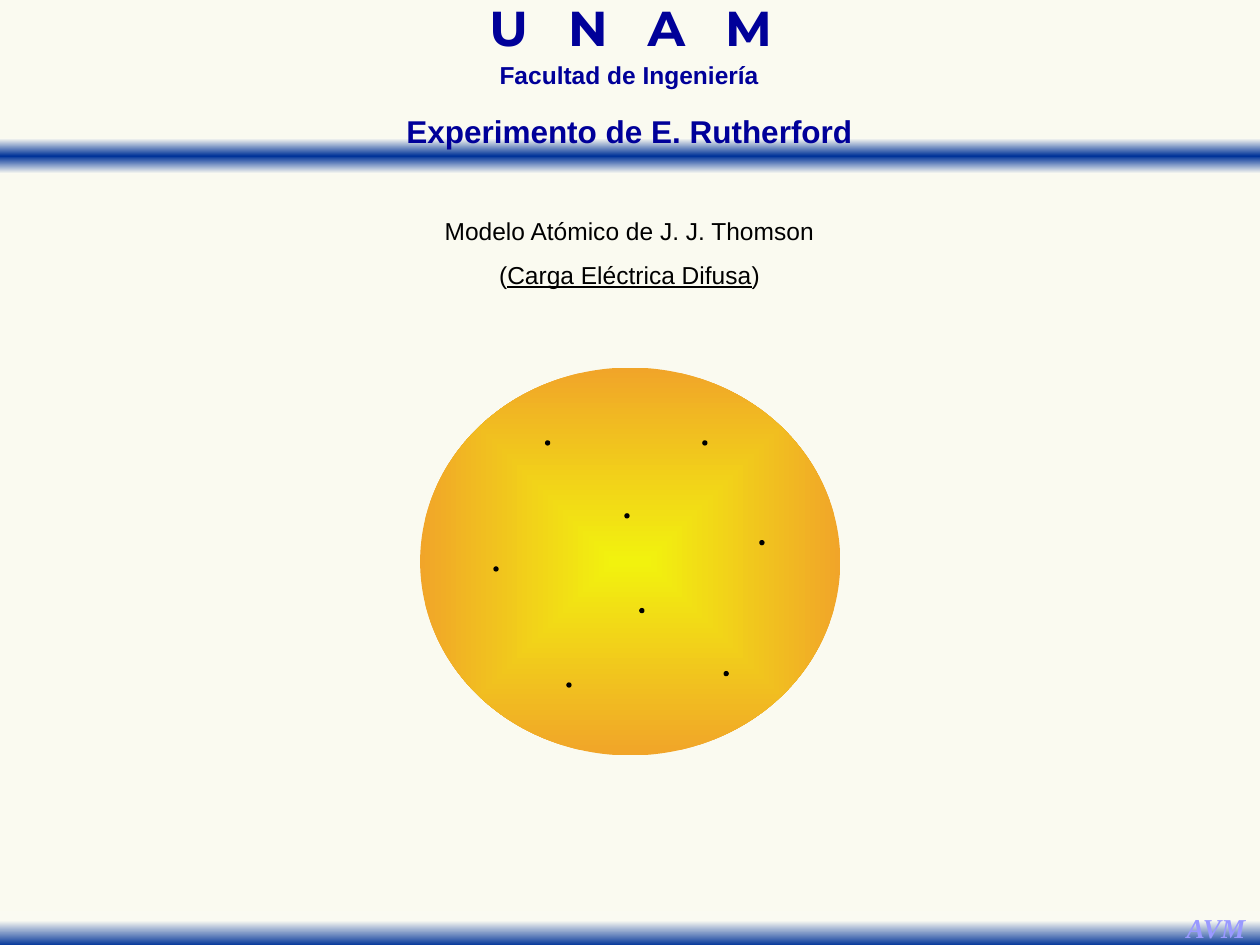
from lxml.etree import SubElement
from pptx import Presentation
from pptx.dml.color import RGBColor
from pptx.enum.shapes import MSO_SHAPE
from pptx.enum.text import MSO_AUTO_SIZE, PP_ALIGN
from pptx.oxml.ns import qn
from pptx.util import Cm, Pt

COLORS = {
    "paper": "FAFAF0",
    "band_edge": "FAFAF2",
    "band": "003399",
    "heading": "000099",
    "signature": "9999FF",
    "ink": "000000",
    "core": "F2F20E",
    "rim": "F1A529",
}
ELECTRONS = [
    (11, 8.89), (14.17, 8.89), (12.6, 10.36), (9.96, 11.43),
    (15.32, 10.9), (12.9, 12.27), (14.6, 13.54), (11.43, 13.77),
]
WIDTH, HEIGHT = 25.4, 19.05


class SlideBuilder:
    """Holds the style and the current slide, and draws each kind of element."""

    def __init__(self, deck):
        self.page = deck.slides.add_slide(deck.slide_layouts[6])
        background = self.page.background.fill
        background.solid()
        background.fore_color.rgb = self.color("paper")

    def color(self, name):
        return RGBColor.from_string(COLORS[name])

    def gradient(self, kind, place, stops, centred=False):
        shape = self.page.shapes.add_shape(kind, *map(Cm, place))
        shape.shadow.inherit = False
        shape.line.fill.background()
        shape.fill.gradient()
        fill = shape._element.spPr.find(qn("a:gradFill"))
        for child in list(fill):
            fill.remove(child)
        stop_list = SubElement(fill, qn("a:gsLst"))
        for position, name in stops:
            stop = SubElement(stop_list, qn("a:gs"), pos=str(position * 1000))
            SubElement(stop, qn("a:srgbClr"), val=COLORS[name])
        if centred:
            route = SubElement(fill, qn("a:path"), path="shape")
            sides = dict.fromkeys("ltrb", "50000")
            SubElement(route, qn("a:fillToRect"), **sides)
        else:
            SubElement(fill, qn("a:lin"), ang="5400000", scaled="1")

    def dots(self, places, size=0.08):
        group = self.page.shapes.add_group_shape()
        for left, top in places:
            dot = group.shapes.add_shape(
                MSO_SHAPE.OVAL, Cm(left), Cm(top), Cm(size), Cm(size))
            dot.shadow.inherit = False
            dot.fill.solid()
            dot.fill.fore_color.rgb = self.color("ink")
            dot.line.color.rgb = self.color("ink")
            dot.line.width = Pt(0.75)

    def text(self, place, lines, size, color, font="Arial", bold=False,
             italic=False, spacing=None, gap=0, wrap=True, space_width=0):
        frame = self.page.shapes.add_textbox(*map(Cm, place)).text_frame
        frame.word_wrap = wrap
        frame.auto_size = MSO_AUTO_SIZE.SHAPE_TO_FIT_TEXT
        for index, spans in enumerate(lines):
            para = frame.add_paragraph() if index else frame.paragraphs[0]
            para.alignment = PP_ALIGN.CENTER
            if spacing:
                para.line_spacing = spacing
            if index:
                para.space_before = Pt(gap)
            for words, underline in spans:
                span = para.add_run()
                span.text = words
                span.font.name = font
                span.font.size = Pt(size)
                span.font.bold = bold
                span.font.italic = italic
                span.font.underline = underline
                span.font.color.rgb = self.color(color)
                if words == " ":
                    span.font._element.set("spc", str(space_width * 100))


def main():
    deck = Presentation()
    deck.slide_width, deck.slide_height = Cm(WIDTH), Cm(HEIGHT)
    slide = SlideBuilder(deck)

    slide.gradient(MSO_SHAPE.RECTANGLE, (0, 2.79, WIDTH, 0.71),
                   [(0, "band_edge"), (50, "band"), (100, "band_edge")])
    slide.text((7.75, 0.15, 9.93, 1.09), [[(letter, False) for letter in "U N A M"]],
               28, "heading", "Montserrat", bold=True, spacing=0.7, space_width=15)
    slide.text((8.15, 1.24, 9.07, 0.69), [[("Facultad de Ingeniería", False)]],
               14, "heading", bold=True, spacing=0.7)
    slide.gradient(MSO_SHAPE.RECTANGLE, (0, 18.36, WIDTH, 0.71),
                   [(28, "band_edge"), (100, "band")])
    slide.text((23.65, 18.24, 1.73, 0.94), [[("AVM", False)]], 15.6, "signature",
               "Times New Roman", bold=True, italic=True, wrap=False)

    slide.text((7.19, 4.24, 11, 1.75),
               [[("Modelo Atómico de J. J. Thomson", False)],
                [("(", False), ("Carga Eléctrica Difusa", True), (")", False)]],
               14, "ink", gap=8)
    slide.gradient(MSO_SHAPE.OVAL, (8.47, 7.41, 8.47, 7.82),
                   [(0, "core"), (100, "rim")], centred=True)
    slide.dots(ELECTRONS)
    slide.text((7.19, 2.13, 11, 1.02), [[("Experimento de E. Rutherford", False)]],
               18, "heading", bold=True)

    deck.save("out.pptx")


if __name__ == "__main__":
    main()
